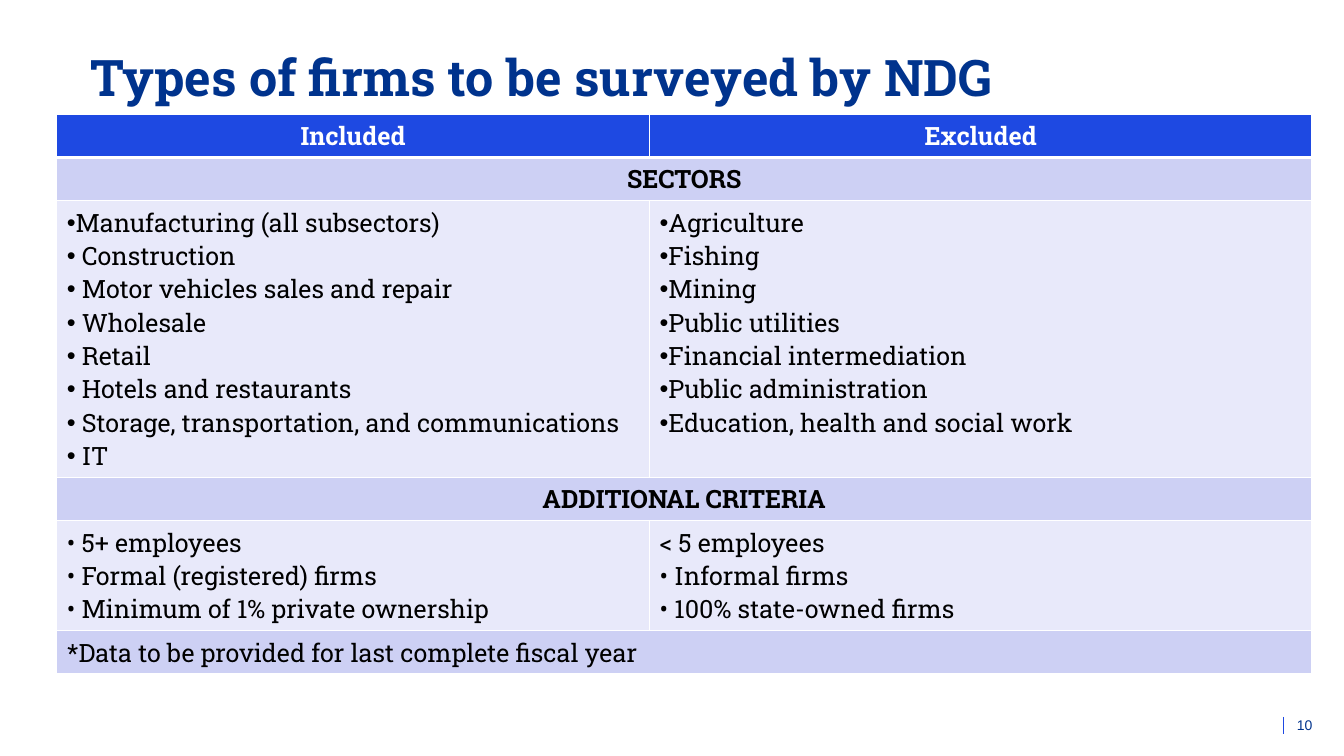
import pptx
import pptx.dml.color
import pptx.enum.shapes
import pptx.enum.text
import pptx.oxml
import pptx.oxml.ns
import pptx.util

Pt = pptx.util.Pt
ALIGN = pptx.enum.text.PP_ALIGN
ANCHOR = pptx.enum.text.MSO_ANCHOR
NAVY, BLUE, LILAC, PALE, WHITE, BLACK = "00338D", "1E49E2", "CDD0F4", "E8E9FA", "FFFFFF", "000000"
SLAB = "Roboto Slab"
HEADER = {"name": SLAB, "size": Pt(18), "bold": True, "color": WHITE}
BAND = HEADER | {"color": BLACK}
BODY = BAND | {"bold": False}

INCLUDED_SECTORS = [
    "Manufacturing (all subsectors)", " Construction", " Motor vehicles sales and repair",
    " Wholesale", " Retail", " Hotels and restaurants",
    " Storage, transportation, and communications", " IT",
]
EXCLUDED_SECTORS = [
    "Agriculture", "Fishing", "Mining", "Public utilities", "Financial intermediation",
    "Public administration", "Education, health and social work",
]
INCLUDED_CRITERIA = ["• 5+ employees", "• Formal (registered) firms", "• Minimum of 1% private ownership"]
EXCLUDED_CRITERIA = ["< 5 employees", "• Informal firms", "• 100% state-owned firms"]

ROWS = [
    (31, BLUE, HEADER, ALIGN.CENTER, False, [["Included"], ["Excluded"]]),
    (31, LILAC, BAND, ALIGN.CENTER, False, [["SECTORS"]]),
    (197.5, PALE, BODY, ALIGN.LEFT, True, [INCLUDED_SECTORS, EXCLUDED_SECTORS]),
    (31, LILAC, BAND, ALIGN.CENTER, False, [["ADDITIONAL CRITERIA"]]),
    (78.5, PALE, BODY, ALIGN.LEFT, False, [INCLUDED_CRITERIA, EXCLUDED_CRITERIA]),
    (31, LILAC, BODY, ALIGN.LEFT, False, [["*Data to be provided for last complete fiscal year"]]),
]


def color(hex_string):
    """Turn a hex string into a colour."""
    return pptx.dml.color.RGBColor.from_string(hex_string)


def xml(markup):
    """Parse a drawing element given without its namespace declaration."""
    tag, rest = markup[:-2].partition(" ")[::2]
    return pptx.oxml.parse_xml(f"{tag} {pptx.oxml.ns.nsdecls('a')} {rest}/>")


def write_lines(frame, lines, style, alignment, bulleted=False):
    """Write one paragraph per line with the given font style."""
    for index, line in enumerate(lines):
        paragraph = frame.paragraphs[0] if index == 0 else frame.add_paragraph()
        paragraph.alignment = alignment
        run = paragraph.add_run()
        run.text = line
        for name, value in style.items():
            if name == "color":
                run.font.color.rgb = color(value)
            else:
                setattr(run.font, name, value)
        if bulleted:
            properties = paragraph._p.get_or_add_pPr()
            properties.append(xml('<a:buFont typeface="Arial"/>'))
            properties.append(xml('<a:buChar char="•"/>'))


def add_text(slide, box, line, style, alignment, frame_format):
    """Place a one-line text box and return its paragraph."""
    frame = slide.shapes.add_textbox(*map(Pt, box)).text_frame
    for name, value in frame_format.items():
        setattr(frame, name, value)
    write_lines(frame, [line], style, alignment)
    return frame.paragraphs[0]


def add_title(slide, box):
    """Place the slide title."""
    style = {"name": SLAB, "size": Pt(36), "bold": True, "color": NAVY}
    frame_format = {"word_wrap": True, "vertical_anchor": ANCHOR.MIDDLE}
    paragraph = add_text(slide, box, "Types of firms to be surveyed by NDG", style, ALIGN.LEFT, frame_format)
    paragraph.line_spacing = 0.7


def add_page_number(slide, box):
    """Place the page number with the thin rule at its left."""
    left, top, width, height = box
    style = {"name": "Arial", "size": Pt(10), "color": NAVY}
    frame_format = dict.fromkeys(["margin_left", "margin_top", "margin_right", "margin_bottom"], 0)
    frame_format |= {"word_wrap": True, "vertical_anchor": ANCHOR.BOTTOM}
    add_text(slide, box, "10", style, ALIGN.RIGHT, frame_format)
    rule_left = left - 1.5
    rule = slide.shapes.add_connector(
        pptx.enum.shapes.MSO_CONNECTOR.STRAIGHT, Pt(rule_left), Pt(top), Pt(rule_left), Pt(top + height))
    rule.line.color.rgb = color(BLUE)
    rule.line.width = Pt(0.5)
    rule._element.spPr.append(xml("<a:effectLst/>"))


def add_borders(cell, widths):
    """Give a cell white borders of the given widths in points."""
    properties = cell._tc.get_or_add_tcPr()
    for side, width in widths.items():
        border = xml(f'<a:ln{side} w="{Pt(width)}"/>')
        fill = xml("<a:solidFill/>")
        fill.append(xml(f'<a:srgbClr val="{WHITE}"/>'))
        border.append(fill)
        properties.append(border)


def add_firms_table(slide, box, left_share):
    """Place the table of included and excluded firms."""
    left, top, width, height = box
    table = slide.shapes.add_table(len(ROWS), 2, Pt(left), Pt(top), Pt(width), Pt(height)).table
    table.columns[0].width = Pt(left_share)
    table.columns[1].width = Pt(width - left_share)
    for index, (row_height, fill, style, alignment, bulleted, texts) in enumerate(ROWS):
        table.rows[index].height = Pt(row_height)
        cells = [table.cell(index, column) for column in range(2)]
        if len(texts) == 1:
            cells[0].merge(cells[1])
        for cell in cells:
            add_borders(cell, {"L": 1, "R": 1, "T": 3 if index == 1 else 1, "B": 3 if index == 0 else 1})
            cell.fill.solid()
            cell.fill.fore_color.rgb = color(fill)
        for cell, lines in zip(cells, texts):
            write_lines(cell.text_frame, lines, style, alignment, bulleted)


def main():
    """Build the slide and save it."""
    presentation = pptx.Presentation()
    presentation.slide_width, presentation.slide_height = Pt(960), Pt(540)
    slide = presentation.slides.add_slide(presentation.slide_layouts[6])
    add_page_number(slide, (918, 512, 19.5, 12))
    add_title(slide, (57.6, 38.9, 802.8, 41.8))
    add_firms_table(slide, (40.5, 81.5, 896.5, sum(row[0] for row in ROWS)), 423.5)
    presentation.save("out.pptx")


if __name__ == "__main__":
    main()
